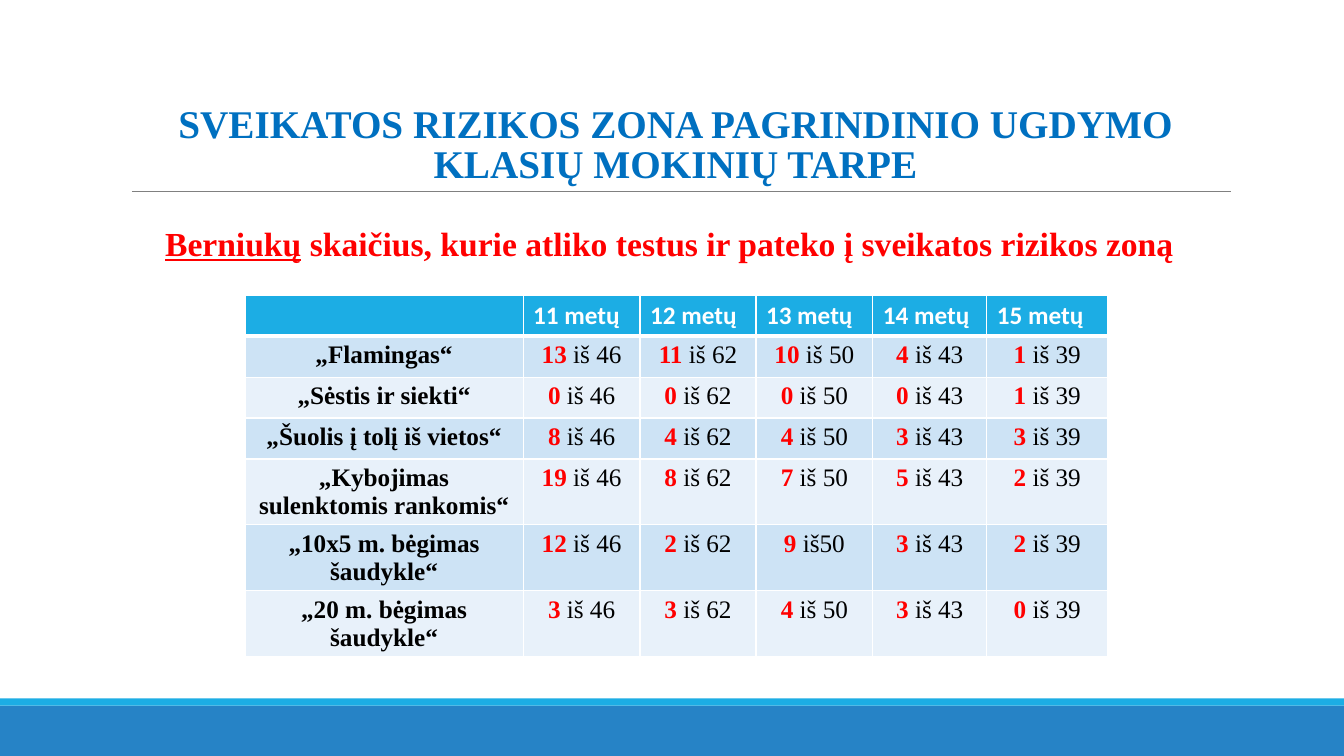
from lxml.etree import SubElement
from pptx import Presentation
from pptx.dml.color import RGBColor
from pptx.enum.shapes import MSO_CONNECTOR as CONNECTOR, MSO_SHAPE as SHAPE
from pptx.enum.text import MSO_ANCHOR as ANCHOR, MSO_AUTO_SIZE as AUTO_SIZE, PP_ALIGN as ALIGN
from pptx.oxml.ns import qn
from pptx.util import Pt

SERIF = "Times New Roman"
SANS = "Calibri"
BLUE, RED, BLACK, WHITE = "0070C0", "FF0000", "000000", "FFFFFF"
HEADER_FILL = "1CADE4"
BAND_FILLS = ("CDE3F5", "E8F1FA")

COLUMN_WIDTHS = (198.7, 83.5, 82.8, 83.5, 81.4, 86.4)
ROW_HEIGHT = 29.2
AGES = ("", "11 metų", "12 metų", "13 metų", "14 metų", "15 metų")
RESULTS = (
    ("„Flamingas“", "13 iš 46", "11 iš 62", "10 iš 50", "4 iš 43", "1 iš 39"),
    ("„Sėstis ir siekti“", "0 iš 46", "0 iš 62", "0 iš 50", "0 iš 43", "1 iš 39"),
    ("„Šuolis į tolį iš vietos“", "8 iš 46", "4 iš 62", "4 iš 50", "3 iš 43", "3 iš 39"),
    ("„Kybojimas sulenktomis rankomis“", "19 iš 46", "8 iš 62", "7 iš 50", "5 iš 43", "2 iš 39"),
    ("„10x5 m. bėgimas šaudykle“", "12 iš 46", "2 iš 62", "9 iš50", "3 iš 43", "2 iš 39"),
    ("„20 m. bėgimas šaudykle“", "3 iš 46", "3 iš 62", "4 iš 50", "3 iš 43", "0 iš 39"),
)


def color(hex_value):
    """Turn a hex string into a colour."""
    return RGBColor.from_string(hex_value)


def box(left, top, width, height):
    """Turn four point values into lengths."""
    return Pt(left), Pt(top), Pt(width), Pt(height)


def add_run(p, text, size, hex_value, font=SERIF, bold=True, underline=False):
    """Append a formatted run to a paragraph."""
    r = p.add_run()
    r.text = text
    r.font.size = Pt(size)
    r.font.name = font
    r.font.bold = bold
    r.font.underline = underline
    r.font.color.rgb = color(hex_value)


def add_bar(s, top, height, fill):
    """Draw a full-width footer bar."""
    sp = s.shapes.add_shape(SHAPE.RECTANGLE, *box(0, top, 960, height))
    sp.shadow.inherit = False
    sp.fill.solid()
    sp.fill.fore_color.rgb = color(fill)
    sp.line.fill.background()


def add_rule(s, left, right, y):
    """Draw the thin grey line under the title."""
    line = s.shapes.add_connector(CONNECTOR.STRAIGHT, Pt(left), Pt(y), Pt(right), Pt(y))
    line.line.color.rgb = color("808080")
    line.line.width = Pt(0.5)
    SubElement(line._element.spPr, qn("a:effectLst"))


def set_title(s, text):
    """Place and format the title placeholder."""
    sp = s.shapes.title
    sp.left, sp.top, sp.width, sp.height = box(86.4, 22.3, 792, 114.5)
    tf = sp.text_frame
    tf.auto_size = AUTO_SIZE.NONE
    tf.word_wrap = True
    tf.vertical_anchor = ANCHOR.BOTTOM
    p = tf.paragraphs[0]
    p.alignment = ALIGN.CENTER
    p.line_spacing = 0.85
    add_run(p, text, 28, BLUE)


def add_subtitle(s, underlined, rest):
    """Add the red heading above the table."""
    tf = s.shapes.add_textbox(*box(77.8, 155.5, 800.6, 36)).text_frame
    tf.word_wrap = True
    tf.auto_size = AUTO_SIZE.SHAPE_TO_FIT_TEXT
    p = tf.paragraphs[0]
    p.alignment = ALIGN.CENTER
    add_run(p, underlined, 24, RED, underline=True)
    add_run(p, rest, 24, RED)


def style_cell(cell, fill, bottom=1, top=1):
    """Give a cell white borders and a solid fill."""
    tc_pr = cell._tc.get_or_add_tcPr()
    for side, width in (("L", 1), ("R", 1), ("T", top), ("B", bottom)):
        ln = SubElement(tc_pr, qn(f"a:ln{side}"), w=str(Pt(width)))
        SubElement(SubElement(ln, qn("a:solidFill")), qn("a:srgbClr"), val=WHITE)
    cell.fill.solid()
    cell.fill.fore_color.rgb = color(fill)


def add_results_table(s):
    """Build the table of results by age."""
    rows, cols = len(RESULTS) + 1, len(AGES)
    frame = box(175, 211, sum(COLUMN_WIDTHS), ROW_HEIGHT * rows)
    table = s.shapes.add_table(rows, cols, *frame).table
    for column, width in zip(table.columns, COLUMN_WIDTHS):
        column.width = Pt(width)
    for row in table.rows:
        row.height = Pt(ROW_HEIGHT)

    for j, age in enumerate(AGES):
        cell = table.cell(0, j)
        style_cell(cell, HEADER_FILL, bottom=3)
        if age:
            add_run(cell.text_frame.paragraphs[0], age, 18, WHITE, SANS)

    for i, values in enumerate(RESULTS, start=1):
        for j, value in enumerate(values):
            cell = table.cell(i, j)
            style_cell(cell, BAND_FILLS[(i - 1) % 2], top=3 if i == 1 else 1)
            p = cell.text_frame.paragraphs[0]
            p.alignment = ALIGN.CENTER
            if j == 0:
                add_run(p, value, 18, BLACK)
            else:
                count, total = value.split(" ", 1)
                add_run(p, count + " ", 18, RED)
                add_run(p, total, 18, BLACK, bold=False)


def main():
    """Build and save the slide."""
    prs = Presentation()
    prs.slide_width, prs.slide_height = Pt(960), Pt(540)
    s = prs.slides.add_slide(prs.slide_layouts[5])
    add_bar(s, 504, 36, "2683C6")
    add_bar(s, 498.9, 5.1, HEADER_FILL)
    add_rule(s, 94.3, 879, 136.8)
    set_title(s, "SVEIKATOS RIZIKOS ZONA PAGRINDINIO UGDYMO KLASIŲ MOKINIŲ TARPE")
    add_results_table(s)
    add_subtitle(s, "Berniukų", " skaičius, kurie atliko testus ir pateko į sveikatos rizikos zoną")
    prs.save("out.pptx")


if __name__ == "__main__":
    main()
